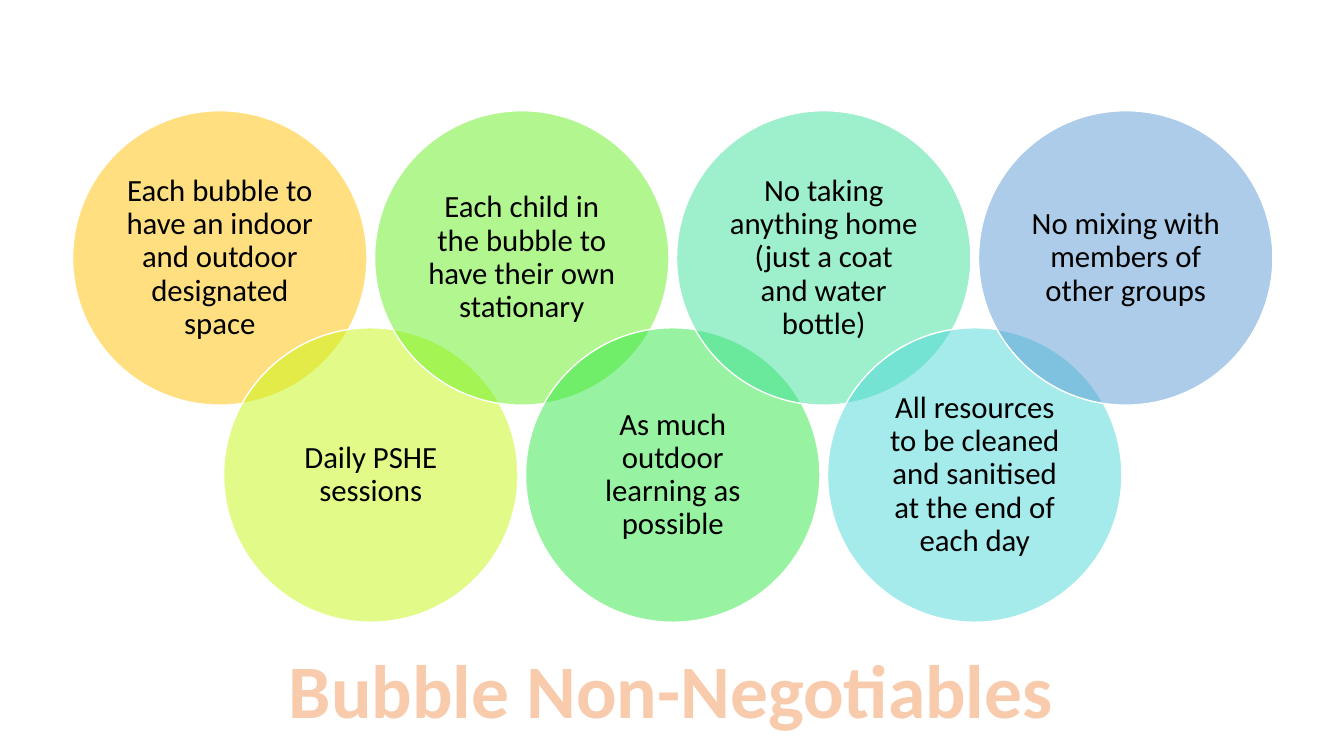
from lxml import etree
from pptx import Presentation
from pptx.dml.color import RGBColor
from pptx.enum.shapes import MSO_SHAPE
from pptx.enum.text import MSO_ANCHOR, MSO_AUTO_SIZE, PP_ALIGN
from pptx.oxml.ns import qn
from pptx.util import Cm, Pt

OVAL = MSO_SHAPE.OVAL
MIDDLE = MSO_ANCHOR.MIDDLE
CENTER = PP_ALIGN.CENTER
NO_AUTOFIT = MSO_AUTO_SIZE.NONE

FONT = "Calibri"
COLORS = {
    "amber": "FFC000",
    "lime": "C7F711",
    "leaf": "67EF21",
    "green": "30E845",
    "mint": "3FE19B",
    "turquoise": "4DD8DB",
    "blue": "5B9BD5",
    "outline": "FFFFFF",
    "text": "000000",
    "heading": "F8CBAD",
}
RULES = [
    ("amber", "Each bubble to have an indoor and outdoor designated space"),
    ("lime", "Daily PSHE sessions"),
    ("leaf", "Each child in the bubble to have their own stationary"),
    ("green", "As much outdoor learning as possible"),
    ("mint", "No taking anything home (just a coat and water bottle)"),
    ("turquoise", "All resources to be cleaned and sanitised at the end of each day"),
    ("blue", "No mixing with members of other groups"),
]
DIAMETER = 7.42
FIRST_LEFT = 1.83
STEP = 3.805
ROW_TOPS = (2.79, 8.26)
INSET = Cm(0.23)


def rgb(name):
    return RGBColor.from_string(COLORS[name])


def style_paragraph(paragraph, size, color, bold=False):
    paragraph.alignment = CENTER
    paragraph.font.name = FONT
    paragraph.font.size = Pt(size)
    paragraph.font.bold = bold
    paragraph.font.color.rgb = rgb(color)


prs = Presentation()
prs.slide_width = Cm(33.87)
prs.slide_height = Cm(19.05)
slide = prs.slides.add_slide(prs.slide_layouts[5])

# Overlapping bubbles alternate between the upper and lower row
for index, (color, rule) in enumerate(RULES):
    bubble = slide.shapes.add_shape(
        OVAL, Cm(FIRST_LEFT + index * STEP), Cm(ROW_TOPS[index % 2]),
        Cm(DIAMETER), Cm(DIAMETER))
    bubble.shadow.inherit = False
    bubble.fill.solid()
    bubble.fill.fore_color.rgb = rgb(color)
    fill_color = bubble.fill._xPr.find(qn("a:solidFill"))[0]
    etree.SubElement(fill_color, qn("a:alpha"), val="50000")
    bubble.line.color.rgb = rgb("outline")
    bubble.line.width = Pt(1)

    frame = bubble.text_frame
    frame.word_wrap = True
    frame.vertical_anchor = MIDDLE
    frame.margin_left = frame.margin_right = INSET
    frame.margin_top = frame.margin_bottom = INSET
    frame.text = rule
    frame.paragraphs[0].line_spacing = 0.9
    style_paragraph(frame.paragraphs[0], 22, "text")

heading = slide.shapes.title
heading.left, heading.top = Cm(6.93), Cm(16.05)
heading.width, heading.height = Cm(19.96), Cm(2.57)
heading.text_frame.text = "Bubble Non-Negotiables"
heading.text_frame.auto_size = NO_AUTOFIT
heading.text_frame.word_wrap = False
heading.text_frame.vertical_anchor = MIDDLE
style_paragraph(heading.text_frame.paragraphs[0], 54, "heading", bold=True)

prs.save("out.pptx")
